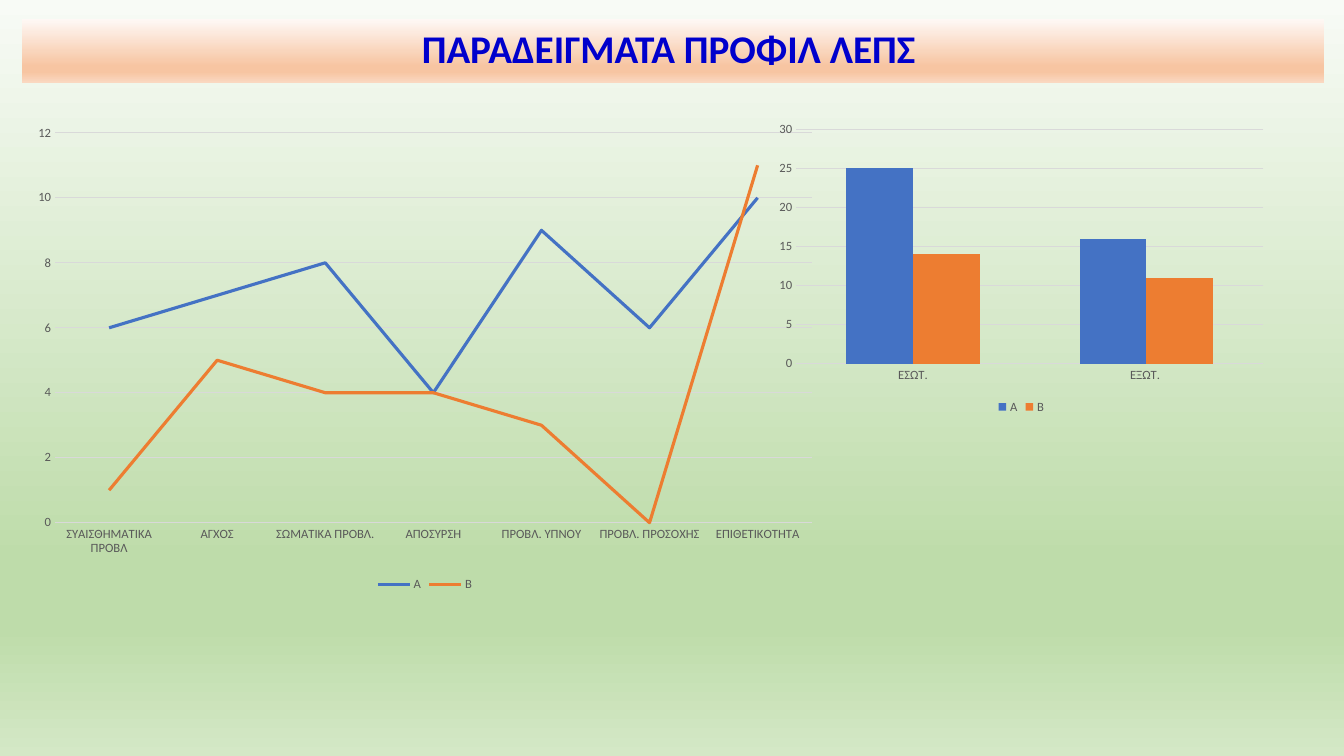
from dataclasses import dataclass

from lxml.etree import SubElement
from pptx import Presentation
from pptx.chart.chart import Chart
from pptx.chart.data import CategoryChartData
from pptx.dml.color import RGBColor
from pptx.dml.fill import FillFormat
from pptx.enum.chart import XL_CHART_TYPE as ChartType
from pptx.enum.chart import XL_LEGEND_POSITION as LegendPosition
from pptx.enum.chart import XL_MARKER_STYLE as MarkerStyle
from pptx.enum.chart import XL_TICK_MARK as TickMark
from pptx.enum.text import MSO_ANCHOR as Anchor
from pptx.enum.text import PP_ALIGN as Align
from pptx.oxml.ns import qn
from pptx.slide import Slide
from pptx.util import Inches, Pt

FONT = "Calibri"
BLACK = RGBColor(0x00, 0x00, 0x00)
TITLE_BLUE = RGBColor(0x00, 0x00, 0xCC)
LABEL_GREY = RGBColor(0x59, 0x59, 0x59)
GRID_GREY = RGBColor(0xD9, 0xD9, 0xD9)
SERIES_COLORS = (RGBColor(0x44, 0x72, 0xC4), RGBColor(0xED, 0x7D, 0x31))

# Light, dark and closing tones of the vertical gradients
GREENS = (RGBColor(0xF8, 0xFB, 0xF6), RGBColor(0xBE, 0xDC, 0xAA), RGBColor(0xD4, 0xE8, 0xC6))
ORANGES = (RGBColor(0xFE, 0xF8, 0xF5), RGBColor(0xF7, 0xC5, 0xA2), RGBColor(0xFA, 0xD8, 0xC1))


@dataclass(frozen=True)
class ProfileChart:
    kind: ChartType
    left: float
    top: float
    width: float
    height: float
    categories: tuple[str, ...]
    series: dict[str, tuple[int, ...]]
    maximum: int
    step: int


PROFILE_CHARTS = (
    ProfileChart(
        ChartType.LINE, 0.22, 1.15, 7.99, 4.76,
        ("ΣΥΑΙΣΘΗΜΑΤΙΚΑ ΠΡΟΒΛ", "ΑΓΧΟΣ", "ΣΩΜΑΤΙΚΑ ΠΡΟΒΛ.", "ΑΠΟΣΥΡΣΗ",
         "ΠΡΟΒΛ. ΥΠΝΟΥ", "ΠΡΟΒΛ. ΠΡΟΣΟΧΗΣ", "ΕΠΙΘΕΤΙΚΟΤΗΤΑ"),
        {"Α": (6, 7, 8, 4, 9, 6, 10), "Β": (1, 5, 4, 4, 3, 0, 11)},
        maximum=12, step=2,
    ),
    ProfileChart(
        ChartType.COLUMN_CLUSTERED, 7.63, 1.15, 5, 3,
        ("ΕΣΩΤ.", "ΕΞΩΤ. "),
        {"Α": (25, 16), "Β": (14, 11)},
        maximum=30, step=5,
    ),
)


def apply_gradient(fill: FillFormat, element, tones: tuple[RGBColor, ...]) -> None:
    """Fill from top to bottom, with the dark tone held from 74 to 83 percent."""
    light, dark, closing = tones
    fill.gradient()
    fill.gradient_angle = 270
    stops = element.find(".//" + qn("a:gsLst"))
    stops.clear()
    for percent, color in ((0, light), (74, dark), (83, dark), (100, closing)):
        stop = SubElement(stops, qn("a:gs"), pos=str(percent * 1000))
        SubElement(stop, qn("a:srgbClr"), val=str(color))


def style_font(font, size: float, color: RGBColor, bold: bool = False) -> None:
    font.name = FONT
    font.size = Pt(size)
    font.bold = bold
    font.color.rgb = color


def add_title(slide: Slide) -> None:
    title = slide.shapes.title
    title.left, title.top = Inches(0.22), Inches(0.19)
    title.width, title.height = Inches(12.91), Inches(0.63)
    apply_gradient(title.fill, title.element, ORANGES)
    title.text_frame.vertical_anchor = Anchor.MIDDLE
    paragraph = title.text_frame.paragraphs[0]
    paragraph.alignment = Align.CENTER
    paragraph.line_spacing = 0.9
    run = paragraph.add_run()
    run.text = "ΠΑΡΑΔΕΙΓΜΑΤΑ ΠΡΟΦΙΛ ΛΕΠΣ "
    style_font(run.font, 28, TITLE_BLUE, bold=True)


def style_axes(chart: Chart, profile: ProfileChart) -> None:
    category_axis, value_axis = chart.category_axis, chart.value_axis
    for axis in (category_axis, value_axis):
        axis.major_tick_mark = axis.minor_tick_mark = TickMark.NONE
        style_font(axis.tick_labels.font, 9, LABEL_GREY)
        axis.format.line.fill.background()
    if profile.kind == ChartType.LINE:
        category_axis.format.line.color.rgb = GRID_GREY
        category_axis.format.line.width = Pt(0.75)
    value_axis.minimum_scale = 0
    value_axis.maximum_scale = profile.maximum
    value_axis.major_unit = profile.step
    value_axis.has_major_gridlines = True
    grid_line = value_axis.major_gridlines.format.line
    grid_line.color.rgb = GRID_GREY
    grid_line.width = Pt(0.75)


def style_series(chart: Chart, profile: ProfileChart) -> None:
    plot = chart.plots[0]
    plot.vary_by_categories = False
    for series, color in zip(plot.series, SERIES_COLORS):
        if profile.kind == ChartType.LINE:
            series.smooth = False
            series.marker.style = MarkerStyle.NONE
            series.format.line.color.rgb = color
            series.format.line.width = Pt(2.25)
        else:
            series.format.fill.solid()
            series.format.fill.fore_color.rgb = color
    if profile.kind == ChartType.COLUMN_CLUSTERED:
        plot.gap_width = 150
        plot.overlap = 0


def add_profile_chart(slide: Slide, profile: ProfileChart) -> None:
    data = CategoryChartData()
    data.categories = profile.categories
    for name, values in profile.series.items():
        data.add_series(name, values)
    frame = slide.shapes.add_chart(
        profile.kind, Inches(profile.left), Inches(profile.top),
        Inches(profile.width), Inches(profile.height), data,
    )
    chart = frame.chart
    style_font(chart.font, 10, BLACK)
    chart.has_title = False
    chart.has_legend = True
    chart.legend.position = LegendPosition.BOTTOM
    chart.legend.include_in_layout = False
    style_font(chart.legend.font, 9, LABEL_GREY)
    style_axes(chart, profile)
    style_series(chart, profile)


def main() -> None:
    presentation = Presentation()
    presentation.slide_width = Inches(13.33)
    presentation.slide_height = Inches(7.5)
    title_only = presentation.slide_layouts[5]
    slide = presentation.slides.add_slide(title_only)

    # Background and title band
    apply_gradient(slide.background.fill, slide.element, GREENS)
    add_title(slide)

    # Line profile and column summary
    for profile in PROFILE_CHARTS:
        add_profile_chart(slide, profile)

    presentation.save("out.pptx")


if __name__ == "__main__":
    main()
